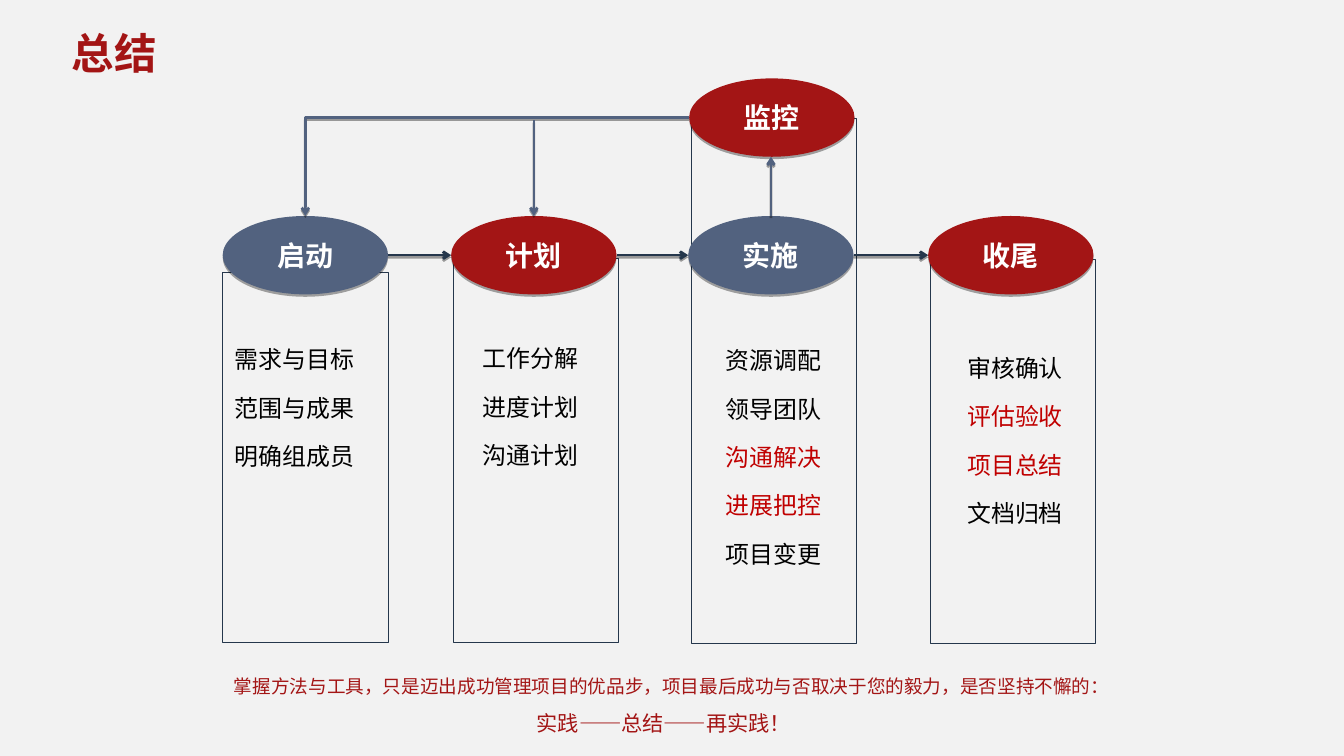
import itertools
import pptx
import pptx.dml.color
import pptx.enum.shapes
import pptx.enum.text
import pptx.oxml.ns
import pptx.util
from lxml import etree

Inches = pptx.util.Inches
Pt = pptx.util.Pt
RGBColor = pptx.dml.color.RGBColor
SHAPE = pptx.enum.shapes.MSO_SHAPE
JOIN = pptx.enum.shapes.MSO_CONNECTOR
ALIGN = pptx.enum.text.PP_ALIGN
ANCHOR = pptx.enum.text.MSO_ANCHOR
qn = pptx.oxml.ns.qn

PAPER = RGBColor(0xF2, 0xF2, 0xF2)
NAVY = RGBColor(0x25, 0x37, 0x4C)
SLATE = RGBColor(0x52, 0x62, 0x7F)
RED = RGBColor(0xA3, 0x15, 0x15)
BRIGHT = RGBColor(0xC0, 0x00, 0x00)
BLACK = RGBColor(0x00, 0x00, 0x00)
WHITE = RGBColor(0xFF, 0xFF, 0xFF)
FONT = "Noto Sans CJK SC"

OVAL_W, OVAL_H = 1.73, 0.82
OVAL_TOP = 2.26
MID = OVAL_TOP + OVAL_H / 2
WATCH_LEFT, WATCH_TOP = 7.21, 0.82
WATCH_MID = WATCH_TOP + OVAL_H / 2

STAGES = [
    ("启动", SLATE, (2.33, 2.85, OVAL_W, 3.87), 0, (0.03, 3.41),
     ["需求与目标", "范围与成果", "明确组成员"], []),
    ("计划", RED, (4.74, 2.7, OVAL_W, 4.02), 0.02, (0.21, 3.4),
     ["工作分解", "进度计划", "沟通计划"], []),
    ("实施", SLATE, (7.23, 1.24, OVAL_W, 5.49), 0.03, (0.26, 3.42),
     ["资源调配", "领导团队", "沟通解决", "进展把控", "项目变更"],
     ["沟通解决", "进展把控"]),
    ("收尾", RED, (9.73, 2.72, OVAL_W, 4.01), 0.02, (0.29, 3.5),
     ["审核确认", "评估验收", "项目总结", "文档归档"],
     ["评估验收", "项目总结"]),
]


def write(frame, text, size, color, bold=False, align=ALIGN.LEFT,
          lines=None, before=None, indent=0):
    """Add one formatted paragraph to a text frame."""
    first = frame.paragraphs[0]
    para = frame.add_paragraph() if first.runs else first
    para.alignment = align
    para.line_spacing = lines
    para.space_before = before
    if indent:
        para._p.get_or_add_pPr().set("marL", str(Inches(indent)))
    run = para.add_run()
    run.text = text
    run.font.size = Pt(size)
    run.font.bold = bold
    run.font.color.rgb = color
    run.font.name = FONT
    face = etree.SubElement(run._r.get_or_add_rPr(), qn("a:ea"))
    face.set("typeface", FONT)


def add_text(slide, box):
    """Add a wrapping text box and return its frame."""
    frame = slide.shapes.add_textbox(*map(Inches, box)).text_frame
    frame.word_wrap = True
    return frame


def cast(effects, alpha, drop):
    """Put a downward shadow into an effect list."""
    shade = etree.SubElement(effects, qn("a:outerShdw"), blurRad="0",
                             dist=str(Pt(drop)), dir="5400000", rotWithShape="0")
    tint = etree.SubElement(shade, qn("a:srgbClr"), val=str(BLACK))
    etree.SubElement(tint, qn("a:alpha"), val=str(alpha * 1000))


def add_oval(slide, text, color, left, top):
    """Draw a shaded oval with a centred label."""
    oval = slide.shapes.add_shape(
        SHAPE.OVAL, *map(Inches, (left, top, OVAL_W, OVAL_H)))
    oval.fill.solid()
    oval.fill.fore_color.rgb = color
    oval.line.fill.background()
    oval.shadow.inherit = False
    cast(oval.element.spPr.find(qn("a:effectLst")), 34, 1.8)
    oval.text_frame.vertical_anchor = ANCHOR.MIDDLE
    write(oval.text_frame, text, 21.1, WHITE, bold=True, align=ALIGN.CENTER)


def add_arrow(slide, start, end, color, bent=False):
    """Draw a shaded arrow, straight or with one corner."""
    kind = JOIN.ELBOW if bent else JOIN.STRAIGHT
    arrow = slide.shapes.add_connector(kind, *map(Inches, start + end))
    arrow.line.color.rgb = color
    arrow.line.width = Pt(2)
    etree.SubElement(arrow.get_or_add_ln(), qn("a:tailEnd"), type="arrow")
    props = arrow.element.spPr
    if bent:
        props.find(qn("a:prstGeom")).set("prst", "bentConnector2")
    cast(etree.SubElement(props, qn("a:effectLst")), 37, 1.6)


def add_stage(slide, box, name, color, shift, place, tasks, marked):
    """Draw one stage: its frame, its oval and its tasks."""
    left, top, width, height = box
    frame = slide.shapes.add_shape(SHAPE.RECTANGLE, *map(Inches, box))
    frame.fill.background()
    frame.line.color.rgb = NAVY
    frame.line.width = Pt(0.75)
    frame.shadow.inherit = False
    add_oval(slide, name, color, left - shift, OVAL_TOP)
    inset, start = place
    body = add_text(slide, (left + inset, start, 1.65, top + height - start))
    for task in tasks:
        write(body, task, 18, BRIGHT if task in marked else BLACK,
              lines=1.5, before=Pt(4))


def add_flow(slide, lefts):
    """Draw the watch oval and the arrows that join the stages."""
    add_oval(slide, "监控", RED, WATCH_LEFT, WATCH_TOP)
    for here, after in itertools.pairwise(lefts):
        add_arrow(slide, (here + OVAL_W, MID), (after, MID), NAVY)
    start, plan, work = (left + OVAL_W / 2 for left in lefts[:3])
    add_arrow(slide, (WATCH_LEFT, WATCH_MID), (start, OVAL_TOP), SLATE, bent=True)
    add_arrow(slide, (plan, WATCH_MID + 0.03), (plan, OVAL_TOP), SLATE)
    add_arrow(slide, (work, OVAL_TOP), (work, WATCH_TOP + OVAL_H), SLATE)


def add_title(slide, box):
    """Write the slide title."""
    frame = add_text(slide, box)
    frame.margin_left = frame.margin_right = 0
    frame.margin_top = frame.margin_bottom = 0
    frame.vertical_anchor = ANCHOR.MIDDLE
    write(frame, "总结", 32, RED, bold=True)


def add_motto(slide, box):
    """Write the two closing lines."""
    frame = add_text(slide, box)
    write(frame, "掌握方法与工具，只是迈出成功管理项目的优品步，"
          "项目最后成功与否取决于您的毅力，是否坚持不懈的：",
          14, RED, align=ALIGN.CENTER, lines=1.5, indent=0.17)
    write(frame, "实践——总结——再实践！", 16, RED, align=ALIGN.CENTER, lines=1.5)


def main():
    """Build the slide and save it."""
    deck = pptx.Presentation()
    deck.slide_width, deck.slide_height = Inches(14.06), Inches(7.91)
    slide = deck.slides.add_slide(deck.slide_layouts[6])
    slide.background.fill.solid()
    slide.background.fill.fore_color.rgb = PAPER
    for name, color, box, shift, place, tasks, marked in STAGES:
        add_stage(slide, box, name, color, shift, place, tasks, marked)
    add_flow(slide, [box[0] - shift for _, _, box, shift, *_ in STAGES])
    add_title(slide, (0.75, 0.28, 1.1, 0.54))
    add_motto(slide, (0.77, 6.9, 12.35, 0.86))
    deck.save("out.pptx")


if __name__ == "__main__":
    main()
